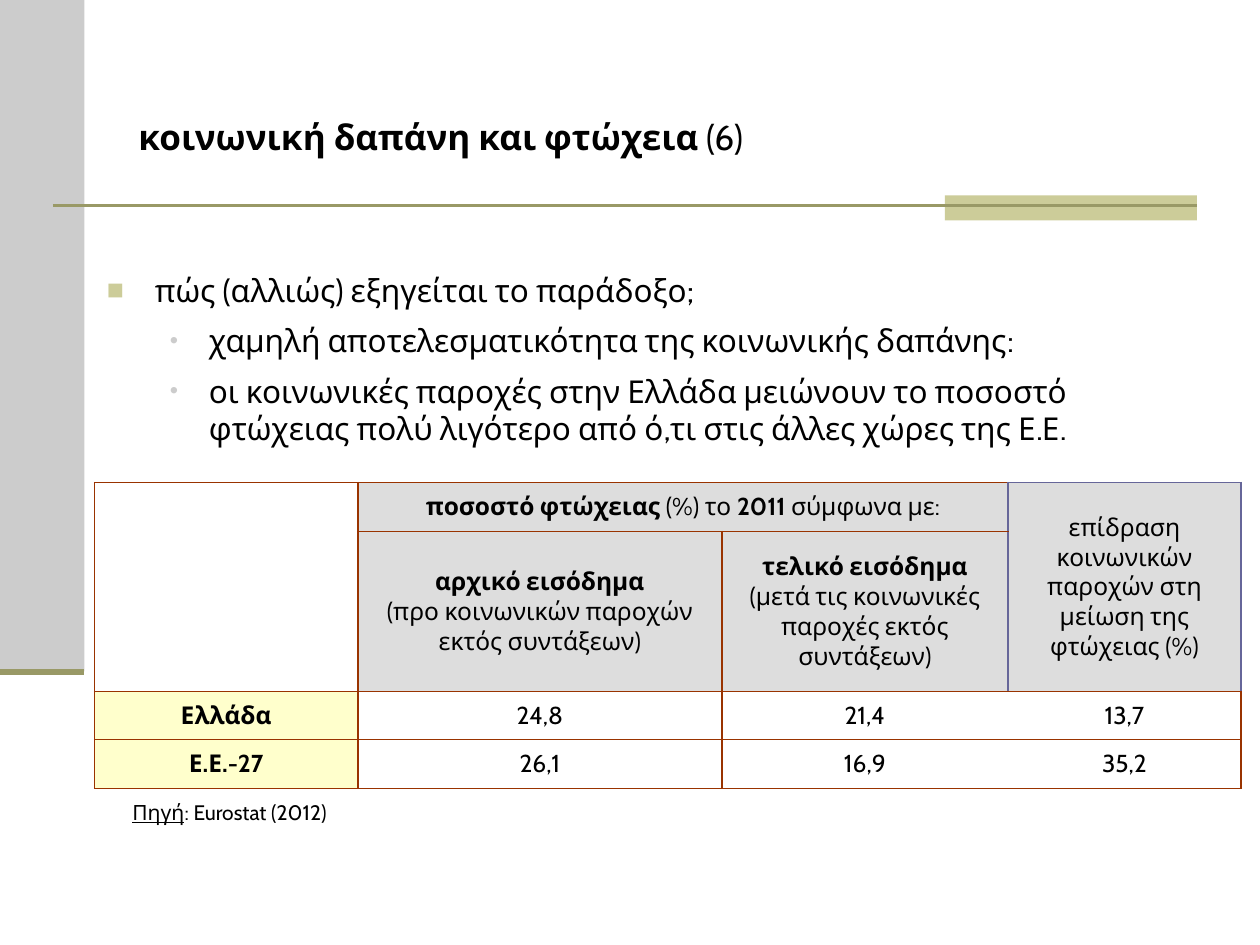
from pptx import Presentation
from pptx.dml.color import RGBColor
from pptx.enum.shapes import MSO_CONNECTOR, MSO_SHAPE
from pptx.enum.text import MSO_ANCHOR, PP_ALIGN
from pptx.oxml.ns import qn
from pptx.util import Inches, Pt
from lxml.etree import SubElement

FONT = "Cabin"
BLACK, WHITE = "000000", "FFFFFF"
GRAY, PALE_GRAY = "CCCCCC", "DDDDDD"
OLIVE, SAND, YELLOW = "999966", "CCCC99", "FFFFCC"
RUST, VIOLET = "993300", "666699"
NO_GRID_STYLE = "{2D5ABB26-0587-4C30-8999-92F81FD0307C}"

BULLETS = [
    ("πώς (αλλιώς) εξηγείται το παράδοξο;", 0),
    ("χαμηλή αποτελεσματικότητα της κοινωνικής δαπάνης:", 1),
    ("οι κοινωνικές παροχές στην Ελλάδα μειώνουν το ποσοστό φτώχειας "
     "πολύ λιγότερο από ό,τι στις άλλες χώρες της Ε.Ε.", 1),
]
BULLET_STYLES = [(0.38, 0.38, "■", SAND, 90), (0.81, 0.31, "•", GRAY, 75)]

COLUMN_WIDTHS = [2.09, 2.89, 2.27, 1.85]
ROW_HEIGHTS = [0.39, 1.04, 0.38, 0.39, 0.39]
HEADERS = {
    (0, 1): [[("ποσοστό φτώχειας", True), (" (%) το ", False),
              ("2011 ", True), ("σύμφωνα με:", False)]],
    (0, 3): [[("επίδραση κοινωνικών παροχών στη μείωση της φτώχειας (%)", False)]],
    (1, 1): [[("αρχικό εισόδημα", True)],
             [("(προ κοινωνικών παροχών εκτός συντάξεων)", False)]],
    (1, 2): [[("τελικό εισόδημα", True)],
             [("(μετά τις κοινωνικές παροχές εκτός συντάξεων)", False)]],
}
DATA = [("Ελλάδα", "24,8", "21,4", "13,7"), ("Ε.Ε.-27", "26,1", "16,9", "35,2")]
MERGES = [((0, 0), (1, 0)), ((0, 1), (0, 2)), ((0, 3), (1, 3)), ((4, 0), (4, 3))]


def rgb(color):
    return RGBColor.from_string(color)


def style_font(paragraph, size):
    paragraph.font.name = FONT
    paragraph.font.size = Pt(size)
    paragraph.font.color.rgb = rgb(BLACK)


def add_runs(paragraph, runs, size):
    style_font(paragraph, size)
    for text, bold in runs:
        run = paragraph.add_run()
        run.text = text
        run.font.bold = bold


def add_block(slide, left, top, width, height, color):
    shape = slide.shapes.add_shape(
        MSO_SHAPE.RECTANGLE, Inches(left), Inches(top), Inches(width), Inches(height))
    shape.shadow.inherit = False
    shape.fill.solid()
    shape.fill.fore_color.rgb = rgb(color)
    shape.line.fill.background()


def add_rule(slide, left, right, top, width):
    connector = slide.shapes.add_connector(
        MSO_CONNECTOR.STRAIGHT, Inches(left), Inches(top), Inches(right), Inches(top))
    connector.line.color.rgb = rgb(OLIVE)
    connector.line.width = Pt(width)
    SubElement(connector._element.spPr, qn("a:effectLst"))


def add_text_frame(slide, left, top, width, height):
    box = slide.shapes.add_textbox(
        Inches(left), Inches(top), Inches(width), Inches(height))
    box.text_frame.word_wrap = True
    return box.text_frame


def add_title(slide):
    frame = add_text_frame(slide, 1, 0.61, 8.5, 0.95)
    frame.vertical_anchor = MSO_ANCHOR.MIDDLE
    runs = [("κοινωνική δαπάνη και φτώχεια", True), (" (6)", False)]
    add_runs(frame.paragraphs[0], runs, 20)


def set_bullet(paragraph, margin, hanging, character, color, percent):
    properties = paragraph._p.get_or_add_pPr()
    properties.set("marL", str(Inches(margin)))
    properties.set("indent", str(-Inches(hanging)))
    bullet_color = SubElement(properties, qn("a:buClr"))
    SubElement(bullet_color, qn("a:srgbClr"), val=color)
    SubElement(properties, qn("a:buSzPct"), val=str(percent * 1000))
    SubElement(properties, qn("a:buFont"), typeface="Arial")
    SubElement(properties, qn("a:buChar"), char=character)


def add_bullets(slide):
    frame = add_text_frame(slide, 0.75, 2.1, 8.99, 1.61)
    for index, (text, level) in enumerate(BULLETS):
        paragraph = frame.add_paragraph() if index else frame.paragraphs[0]
        paragraph.level = level
        set_bullet(paragraph, *BULLET_STYLES[level])
        paragraph.space_before = Pt(3.6 if index else 0)
        paragraph.space_after = Pt(3.6)
        paragraph.text = text
        style_font(paragraph, 18)


def set_borders(cell, **colors):
    properties = cell._tc.get_or_add_tcPr()
    for side in "LRTB":
        if side in colors:
            line = SubElement(properties, qn(f"a:ln{side}"), w=str(Pt(1)))
            fill = SubElement(line, qn("a:solidFill"))
            SubElement(fill, qn("a:srgbClr"), val=colors[side])


def fill_cell(cell, paragraphs, color):
    cell.vertical_anchor = MSO_ANCHOR.MIDDLE
    cell.fill.solid()
    cell.fill.fore_color.rgb = rgb(color)
    for index, runs in enumerate(paragraphs):
        frame = cell.text_frame
        paragraph = frame.add_paragraph() if index else frame.paragraphs[0]
        paragraph.alignment = PP_ALIGN.CENTER
        add_runs(paragraph, runs, 14)


def draw_grid(table):
    for row in range(2):
        set_borders(table.cell(row, 0), L=RUST, R=RUST, T=RUST, B=RUST)
        set_borders(table.cell(row, 1), L=RUST, T=RUST, B=RUST)
        set_borders(table.cell(row, 2), R=VIOLET, T=RUST, B=RUST)
    set_borders(table.cell(0, 3), L=VIOLET, R=VIOLET, T=VIOLET)
    set_borders(table.cell(1, 3), L=VIOLET, R=VIOLET, B=RUST)
    for row, edge in ((2, "T"), (3, "B")):
        set_borders(table.cell(row, 0), L=RUST, R=RUST, **{edge: RUST})
        set_borders(table.cell(row, 1), L=RUST, **{edge: RUST})
        set_borders(table.cell(row, 2), **{edge: RUST})
        set_borders(table.cell(row, 3), R=RUST, **{edge: RUST})
    for column in range(4):
        set_borders(table.cell(4, column), T=RUST)


def add_source(cell):
    cell.vertical_anchor = MSO_ANCHOR.MIDDLE
    paragraph = cell.text_frame.paragraphs[0]
    paragraph._p.get_or_add_pPr().set("marL", str(Inches(0.2)))
    add_runs(paragraph, [("Πηγή", False), (": Eurostat (2012)", False)], 12)
    paragraph.runs[0].font.underline = True


def add_poverty_table(slide):
    table = slide.shapes.add_table(
        len(ROW_HEIGHTS), len(COLUMN_WIDTHS), Inches(0.75), Inches(3.83),
        Inches(sum(COLUMN_WIDTHS)), Inches(sum(ROW_HEIGHTS))).table
    table.first_row = table.horz_banding = False
    table._tbl.tblPr.find(qn("a:tableStyleId")).text = NO_GRID_STYLE
    for column, width in zip(table.columns, COLUMN_WIDTHS):
        column.width = Inches(width)
    for row, height in zip(table.rows, ROW_HEIGHTS):
        row.height = Inches(height)
    draw_grid(table)
    for position, paragraphs in HEADERS.items():
        fill_cell(table.cell(*position), paragraphs, PALE_GRAY)
    for row, values in enumerate(DATA, start=2):
        for column, value in enumerate(values):
            is_label = column == 0
            fill_cell(table.cell(row, column), [[(value, is_label)]],
                      YELLOW if is_label else WHITE)
    for row, column in ((0, 0), (4, 0)):
        table.cell(row, column).fill.background()
    add_source(table.cell(4, 0))
    for first, last in MERGES:
        table.cell(*first).merge(table.cell(*last))


def main():
    presentation = Presentation()
    presentation.slide_width = Inches(10)
    presentation.slide_height = Inches(7.5)
    slide = presentation.slides.add_slide(presentation.slide_layouts[6])
    add_block(slide, 0, 0, 0.67, 5.33, GRAY)
    add_block(slide, 7.5, 1.55, 2, 0.2, SAND)
    add_rule(slide, 0.42, 9.5, 1.63, 1.5)
    add_rule(slide, 0, 0.67, 5.33, 3.5)
    add_bullets(slide)
    add_title(slide)
    add_poverty_table(slide)
    presentation.save("out.pptx")


if __name__ == "__main__":
    main()
